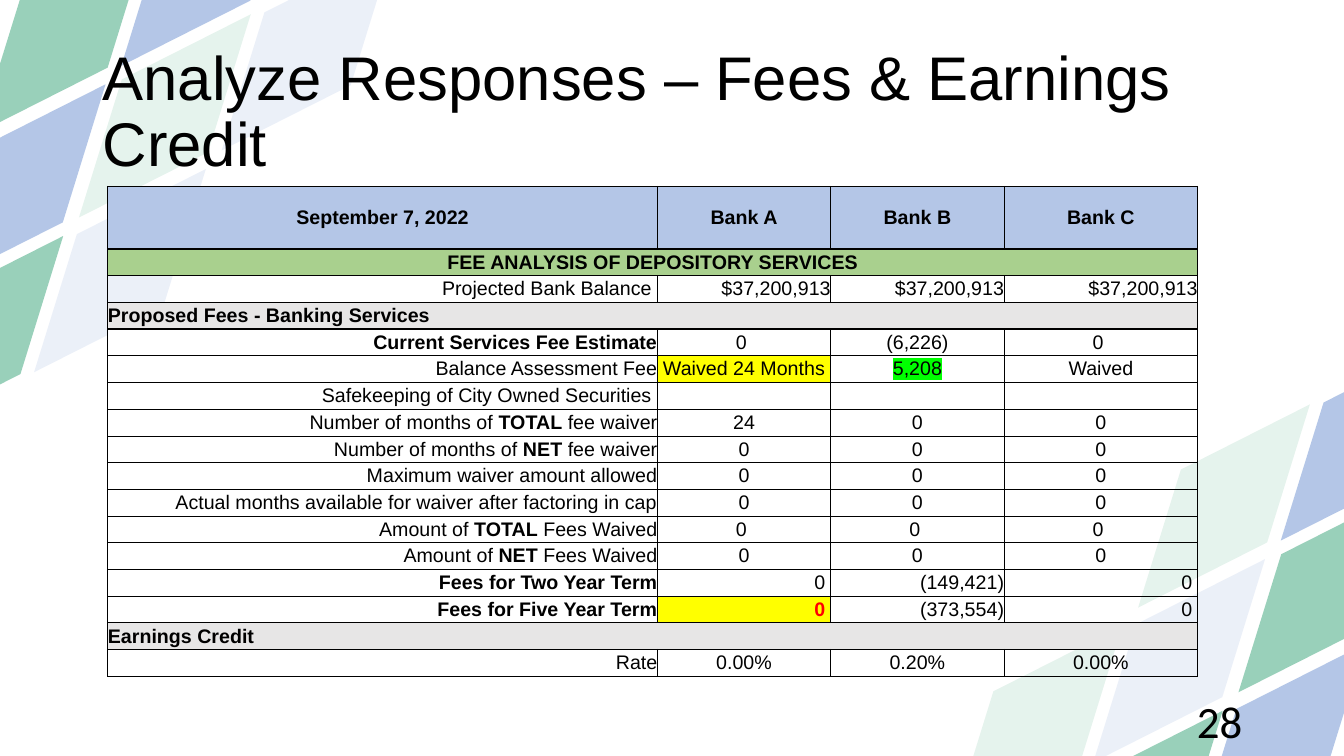
from lxml import etree
from pptx import Presentation
from pptx.dml.color import RGBColor
from pptx.enum import shapes, text
from pptx.oxml import ns
from pptx.util import Inches, Pt

BLACK = RGBColor(0x00, 0x00, 0x00)
WHITE = RGBColor(0xFF, 0xFF, 0xFF)
RED = RGBColor(0xFF, 0x00, 0x00)
YELLOW = RGBColor(0xFF, 0xFF, 0x00)
LIME = RGBColor(0x00, 0xFF, 0x00)
GREEN = RGBColor(0x00, 0x8A, 0x54)
BLUE = RGBColor(0x44, 0x72, 0xC4)
HEADER_BLUE = RGBColor(0xB4, 0xC6, 0xE7)
BANNER_GREEN = RGBColor(0xA9, 0xD0, 0x8E)
SECTION_GRAY = RGBColor(0xE7, 0xE6, 0xE6)

LEFT, CENTER, RIGHT = text.PP_ALIGN.LEFT, text.PP_ALIGN.CENTER, text.PP_ALIGN.RIGHT

# Opacity (percent) of each diamond, two per row; None leaves a gap.
LEFT_DIAMONDS = [40, 40, 10, 10, None, 40, 40, 10]
RIGHT_DIAMONDS = [10, 40, 40, None, 10, 10, 40, 40]

COLUMN_WIDTHS = [0.38, 5.07, 1.72, 1.72, 1.92]
HEADER_HEIGHT = 0.62
HEAVY_LINES = {0, 1, 2, 3, 4, 15, 16}
SPLIT_ROW = 4
SECTION_ROWS = {3, 15}

# Label, alignment of the values, values; ** marks bold text.
FEE_ROWS = [
    ("**September 7, 2022**", CENTER, ["**Bank A**", "**Bank B**", "**Bank C**"]),
    ("**FEE ANALYSIS OF DEPOSITORY SERVICES**", CENTER, [""] * 3),
    ("Projected Bank Balance ", RIGHT, ["$37,200,913"] * 3),
    ("**Proposed Fees - Banking Services**", CENTER, [""] * 3),
    ("**Current Services Fee Estimate**", CENTER, ["0 ", "(6,226)", "0 "]),
    ("Balance Assessment Fee", CENTER, ["Waived 24 Months", "5,208", "Waived"]),
    ("Safekeeping of City Owned Securities ", CENTER, [""] * 3),
    ("Number of months of **TOTAL** fee waiver", CENTER, ["24", "0", "0"]),
    ("Number of months of **NET** fee waiver", CENTER, ["0"] * 3),
    ("Maximum waiver amount allowed", CENTER, ["0"] * 3),
    ("Actual months available for waiver after factoring in cap", CENTER, ["0"] * 3),
    ("Amount of **TOTAL** Fees Waived", CENTER, ["0 "] * 3),
    ("Amount of **NET** Fees Waived", CENTER, ["0"] * 3),
    ("**Fees for Two Year Term**", RIGHT, ["0 ", "(149,421)", "0 "]),
    ("**Fees for Five Year Term**", RIGHT, ["**0 **", "(373,554)", "0 "]),
    ("**Earnings Credit**", CENTER, [""] * 3),
    ("Rate", CENTER, ["0.00%", "0.20%", "0.00%"]),
]
CELL_FILLS = {(SPLIT_ROW, 0): WHITE, (SPLIT_ROW, 1): WHITE, (5, 2): YELLOW, (14, 2): YELLOW}
ROW_FILLS = {0: HEADER_BLUE, 1: BANNER_GREEN, 3: SECTION_GRAY, 15: SECTION_GRAY}


def add_diamonds(slide, left, top, opacities):
    """Slanted lattice, two diamonds wide, whose first diamond is at left, top."""
    for i, opacity in enumerate(opacities):
        if opacity is None:
            continue
        block, cell = divmod(i, 4)
        row, col = divmod(cell, 2)
        x = left + 1.415 * col + 0.995 * row - 1.86 * block
        y = top - 0.665 * col + 0.84 * row + 2.2 * block
        sp = slide.shapes.add_shape(shapes.MSO_SHAPE.DIAMOND, Inches(x), Inches(y),
                                    Inches(1.12), Inches(2.64))
        sp.rotation = 40.2
        sp.shadow.inherit = False
        sp.line.fill.background()
        sp.fill.solid()
        sp.fill.fore_color.rgb = BLUE if col else GREEN
        color = sp.fill._xPr.find(ns.qn("a:solidFill"))[0]
        etree.SubElement(color, ns.qn("a:alpha")).set("val", str(opacity * 1000))


def add_text(slide, left, top, width, height, words, font, size, align):
    sp = slide.shapes.add_textbox(Inches(left), Inches(top), Inches(width), Inches(height))
    tf = sp.text_frame
    tf.word_wrap = True
    tf.vertical_anchor = text.MSO_ANCHOR.MIDDLE
    p = tf.paragraphs[0]
    p.text = words
    p.alignment = align
    style_run(p.runs[0], font, size)
    return p


def style_run(r, font, size, color=BLACK, bold=False):
    r.font.name = font
    r.font.size = Pt(size)
    r.font.bold = bold
    r.font.color.rgb = color


def write_cell(cell, words, align, color=BLACK):
    cell.margin_left = cell.margin_right = cell.margin_top = cell.margin_bottom = 0
    cell.vertical_anchor = text.MSO_ANCHOR.MIDDLE
    p = cell.text_frame.paragraphs[0]
    p.alignment = align
    for i, part in enumerate(words.split("**")):
        if part:
            r = p.add_run()
            r.text = part
            style_run(r, "Arial", 14, color, bold=i % 2 == 1)
    if not words:
        etree.SubElement(p._p, ns.qn("a:endParaRPr")).set("sz", "1400")


def set_borders(cell, widths):
    """Draws left, right, top and bottom lines; a width of 0 hides the line."""
    tc_pr = cell._tc.get_or_add_tcPr()
    for side, width in zip("LRTB", widths):
        ln = etree.SubElement(tc_pr, ns.qn(f"a:ln{side}"), w=str(Pt(width)))
        if width:
            fill = etree.SubElement(ln, ns.qn("a:solidFill"))
            etree.SubElement(fill, ns.qn("a:srgbClr")).set("val", str(BLACK))
        else:
            etree.SubElement(ln, ns.qn("a:noFill"))


def border_widths(row, col):
    last = len(COLUMN_WIDTHS) - 1
    section = row in SECTION_ROWS
    left = 1 if col == 0 else 0 if section or (row, col) == (SPLIT_ROW, 1) else 0.5
    right = 0 if (section and col < last) or (row, col) == (SPLIT_ROW, 0) else 0.5
    top, bottom = (1 if line in HEAVY_LINES else 0.5 for line in (row, row + 1))
    return left, right, top, bottom


def highlight(r, color):
    mark = etree.Element(ns.qn("a:highlight"))
    etree.SubElement(mark, ns.qn("a:srgbClr")).set("val", str(color))
    r._r.rPr.find(ns.qn("a:solidFill")).addnext(mark)


def add_fee_table(slide, left, top, width, height):
    count = len(FEE_ROWS)
    table = slide.shapes.add_table(count, len(COLUMN_WIDTHS), Inches(left), Inches(top),
                                   Inches(width), Inches(height)).table
    table.first_row = table.horz_banding = False
    for column, column_width in zip(table.columns, COLUMN_WIDTHS):
        column.width = Inches(column_width)
    body_height = (height - HEADER_HEIGHT) / (count - 1)

    for row, (label, align, values) in enumerate(FEE_ROWS):
        table.rows[row].height = Inches(body_height if row else HEADER_HEIGHT)
        label_align = LEFT if row in SECTION_ROWS else CENTER if row < 2 else RIGHT
        label_col = 1 if row == SPLIT_ROW else 0
        for col in range(len(COLUMN_WIDTHS)):
            cell = table.cell(row, col)
            words = label if col == label_col else values[col - 2] if col > 1 else ""
            color = RED if (row, col) == (14, 2) else BLACK
            write_cell(cell, words, label_align if col < 2 else align, color)
            set_borders(cell, border_widths(row, col))
            fill = CELL_FILLS.get((row, col), ROW_FILLS.get(row))
            if fill is None:
                cell.fill.background()
            else:
                cell.fill.solid()
                cell.fill.fore_color.rgb = fill
        if row != SPLIT_ROW:
            table.cell(row, 0).merge(table.cell(row, 4 if row == 1 else 1))

    highlight(table.cell(5, 3).text_frame.paragraphs[0].runs[0], LIME)


def main():
    prs = Presentation()
    prs.slide_width, prs.slide_height = Inches(13.33), Inches(7.5)
    slide = prs.slides.add_slide(prs.slide_layouts[6])
    add_diamonds(slide, 11.58, 3.7, RIGHT_DIAMONDS)
    add_diamonds(slide, 0.08, -1.01, LEFT_DIAMONDS)
    title = add_text(slide, 0.92, 0.4, 11.5, 1.45,
                     "Analyze Responses – Fees & Earnings Credit", "Arial", 44, LEFT)
    title.line_spacing = 0.9
    add_fee_table(slide, 1.07, 1.85, 10.81, 4.86)
    add_text(slide, 9.42, 6.95, 3, 0.4, "28", "Calibri", 32, RIGHT)
    prs.save("out.pptx")


if __name__ == "__main__":
    main()
